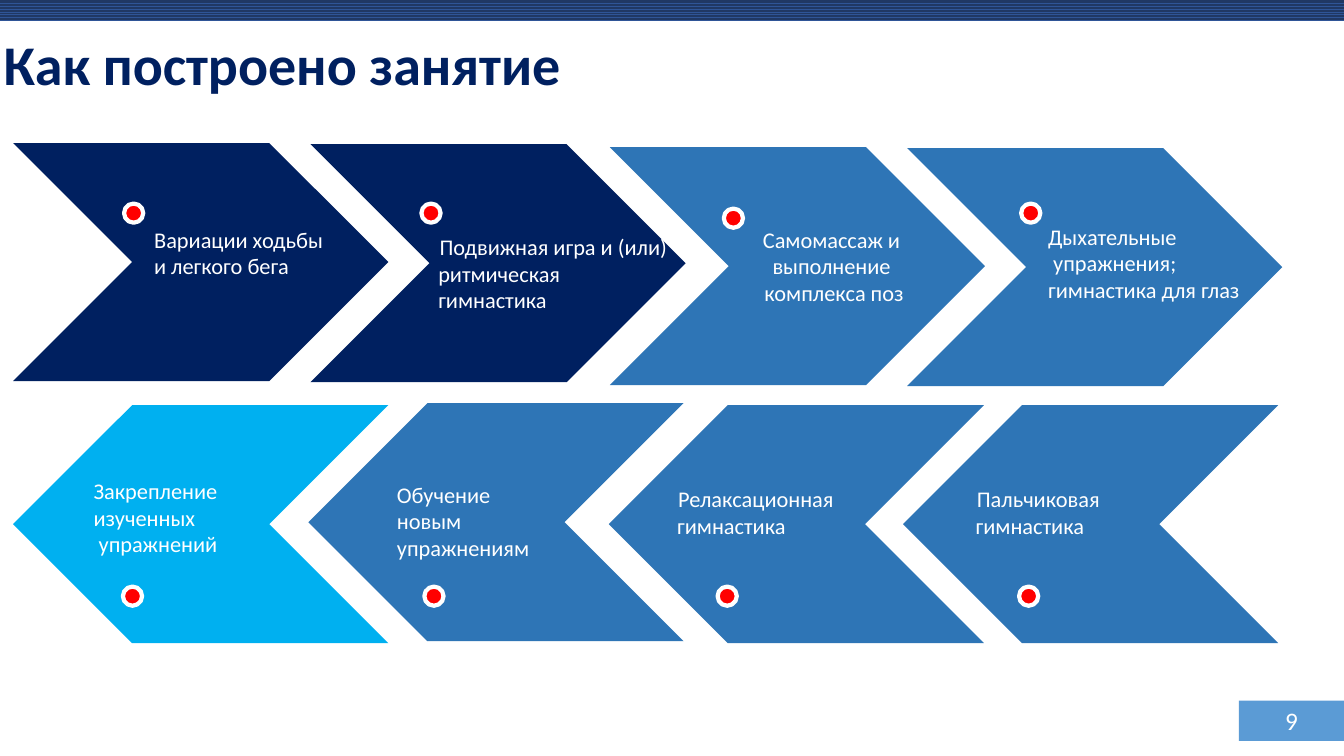
from pptx import Presentation
from pptx.dml.color import RGBColor
from pptx.enum.dml import MSO_PATTERN
from pptx.enum.shapes import MSO_SHAPE
from pptx.enum.text import MSO_ANCHOR, MSO_AUTO_SIZE, PP_ALIGN
from pptx.oxml.ns import qn
from pptx.util import Pt

COLORS = {
    "navy": "002060", "blue": "2E75B6", "cyan": "00B0F0", "badge": "5B9BD5",
    "red": "FF0000", "white": "FFFFFF", "band": "2F5597", "band_back": "203864",
}
ALIGN = {"l": PP_ALIGN.LEFT, "c": PP_ALIGN.CENTER}
CHEVRON_SIZE = (268, 170)
DOT_SIZE = 13.7
LINE_HEIGHT = 19.4

# Fill, chevron corner, dot corner, text box (left, top, width), alignments, lines
FORWARD_STEPS = [
    ("navy", (9.4, 102.2), (88.6, 145.4), (103, 157.7, 140.4), "ll",
     ["Вариации ходьбы", "и легкого бега"]),
    ("navy", (221.8, 103), (301, 145.4), (306, 162.7, 182.2), "cll",
     ["Подвижная игра и (или) ", "ритмическая", "гимнастика"]),
    ("blue", (435.6, 105.1), (517, 149), (537.1, 157.7, 117.4), "ccc",
     ["Самомассаж и ", "выполнение ", "комплекса поз"]),
    ("blue", (648, 105.8), (729.4, 145.4), (741.6, 155.5, 152.6), "lll",
     ["Дыхательные", " упражнения;", "гимнастика для глаз"]),
]
RETURN_STEPS = [
    ("blue", (645.1, 289.4), (727.9, 419), (689.8, 342.7, 107.3), "cl",
     ["Пальчиковая ", "гимнастика"]),
    ("blue", (434.9, 289.4), (512.6, 419), (476.6, 342.7, 130.3), "cl",
     ["Релаксационная ", "гимнастика"]),
    ("blue", (220.3, 288), (303.1, 419), (276.5, 339.8, 110.2), "lll",
     ["Обучение", "новым", "упражнениям"]),
    ("cyan", (9.4, 289.4), (87.8, 419), (59.8, 337, 108), "lll",
     ["Закрепление", "изученных", " упражнений"]),
]


def color(name):
    return RGBColor.from_string(COLORS[name])


def add_run(paragraph, text, size, color_name, bold=False):
    run = paragraph.add_run()
    run.text = text
    run.font.name = "Calibri"
    run.font.size = Pt(size)
    run.font.bold = bold
    run.font.color.rgb = color(color_name)


def add_filled(slide, kind, left, top, width, height, fill):
    shape = slide.shapes.add_shape(kind, Pt(left), Pt(top), Pt(width), Pt(height))
    shape.shadow.inherit = False
    shape.fill.solid()
    shape.fill.fore_color.rgb = color(fill)
    shape.line.fill.background()
    return shape


def add_band(slide):
    band = add_filled(slide, MSO_SHAPE.RECTANGLE, 0, 0, 960, 15, "band")
    band.fill.patterned()
    band.fill.pattern = MSO_PATTERN.ZIG_ZAG
    band.fill.fore_color.rgb = color("band")
    band.fill.back_color.rgb = color("band_back")


def set_title(slide, text):
    title = slide.shapes.title
    title.left, title.top, title.width, title.height = Pt(0), Pt(20.9), Pt(403), Pt(48.2)
    frame = title.text_frame
    frame.margin_left = frame.margin_right = frame.margin_top = frame.margin_bottom = 0
    frame.auto_size = MSO_AUTO_SIZE.NONE
    frame.word_wrap = False
    frame.vertical_anchor = MSO_ANCHOR.TOP
    frame.paragraphs[0].alignment = PP_ALIGN.CENTER
    add_run(frame.paragraphs[0], text, 40, "navy", bold=True)


def add_page_number(slide, number):
    badge = add_filled(slide, MSO_SHAPE.RECTANGLE, 885, 500.5, 75, 28.8, "badge")
    badge.text_frame.vertical_anchor = MSO_ANCHOR.MIDDLE
    paragraph = badge.text_frame.paragraphs[0]
    paragraph.alignment = PP_ALIGN.CENTER
    add_run(paragraph, number, 18, "white")


def add_chevron(slide, corner, fill, flipped):
    chevron = add_filled(slide, MSO_SHAPE.CHEVRON, *corner, *CHEVRON_SIZE, fill)
    if flipped:
        chevron.element.spPr.find(qn("a:xfrm")).set("flipH", "1")


def add_dot(slide, corner):
    dot = add_filled(slide, MSO_SHAPE.OVAL, *corner, DOT_SIZE, DOT_SIZE, "red")
    dot.line.color.rgb = color("white")
    dot.line.width = Pt(3)


def add_label(slide, place, alignments, lines):
    left, top, width = place
    height = len(lines) * LINE_HEIGHT + 7.2
    box = slide.shapes.add_textbox(Pt(left), Pt(top), Pt(width), Pt(height))
    frame = box.text_frame
    frame.word_wrap = False
    frame.auto_size = MSO_AUTO_SIZE.SHAPE_TO_FIT_TEXT
    for index, (alignment, line) in enumerate(zip(alignments, lines)):
        paragraph = frame.add_paragraph() if index else frame.paragraphs[0]
        paragraph.alignment = ALIGN[alignment]
        add_run(paragraph, line, 16, "white")


def add_steps(slide, steps, flipped):
    for fill, corner, dot_corner, place, alignments, lines in steps:
        add_chevron(slide, corner, fill, flipped)
        add_dot(slide, dot_corner)
        add_label(slide, place, alignments, lines)


def main():
    """Build the slide that shows how a lesson is structured."""
    presentation = Presentation()
    presentation.slide_width, presentation.slide_height = Pt(960), Pt(540)
    slide = presentation.slides.add_slide(presentation.slide_layouts[5])
    add_band(slide)
    set_title(slide, "Как построено занятие")
    add_page_number(slide, "9")
    add_steps(slide, FORWARD_STEPS, flipped=False)
    add_steps(slide, RETURN_STEPS, flipped=True)
    presentation.save("out.pptx")


if __name__ == "__main__":
    main()
